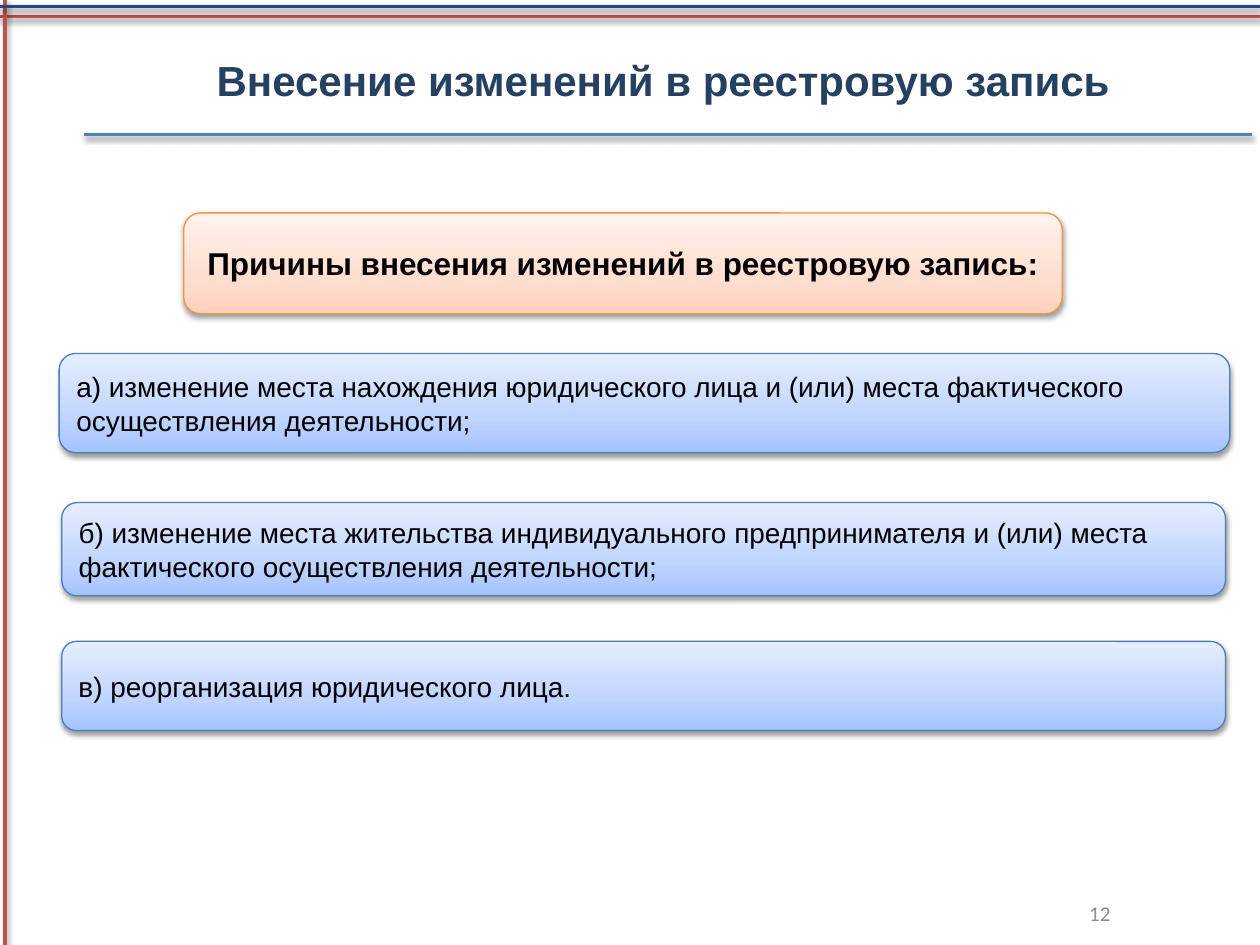
from copy import deepcopy

from lxml import etree
from pptx import Presentation
from pptx import util as u
from pptx.dml import color
from pptx.enum import shapes, text
from pptx.oxml import ns

COLORS = {
    "red": "C0504D", "navy": "1F497D", "blue": "4F81BD",
    "title": "254061", "text": "000000", "number": "8C8C8C",
    "orange edge": "F69240", "blue edge": "4B7EBC",
}
# Gradient colours run from the bottom of a panel to its top
GRADIENTS = {
    "orange": ("FFD2BD", "FFDED0", "FFF2ED"),
    "blue": ("A4C4FF", "BFD4FF", "E6EEFF"),
}
STOPS = (0, 0.35, 1)


def rgb(name):
    return color.RGBColor.from_string(COLORS[name])


class SlideBuilder:
    """Holds the style and the current slide."""

    font = "Arial"
    rule_width = 2
    edge_width = 0.75

    def __init__(self, slide):
        self.slide = slide

    def shadow(self, effects):
        outer = etree.SubElement(
            effects, ns.qn("a:outerShdw"), blurRad=str(u.Pt(3.1)),
            dist=str(u.Pt(1.6)), dir="5400000", rotWithShape="0")
        tint = etree.SubElement(outer, ns.qn("a:srgbClr"), val="000000")
        etree.SubElement(tint, ns.qn("a:alpha"), val="38000")

    def rule(self, x1, y1, x2, y2, name):
        line = self.slide.shapes.add_connector(
            shapes.MSO_CONNECTOR.STRAIGHT, *map(u.Pt, (x1, y1, x2, y2)))
        line.line.color.rgb = rgb(name)
        line.line.width = u.Pt(self.rule_width)
        properties = line.element.spPr
        self.shadow(etree.SubElement(properties, ns.qn("a:effectLst")))

    def fill_text(self, box, words, size, name, align, bold=False, font=None):
        frame = box.text_frame
        frame.word_wrap = True
        frame.vertical_anchor = text.MSO_ANCHOR.MIDDLE
        para = frame.paragraphs[0]
        para.alignment = align
        span = para.add_run()
        span.text = words
        span.font.name = font or self.font
        span.font.size = u.Pt(size)
        span.font.bold = bold
        span.font.color.rgb = rgb(name)

    def label(self, place, words, size, name, align, **style):
        box = self.slide.shapes.add_textbox(*map(u.Pt, place))
        self.fill_text(box, words, size, name, align, **style)

    def panel(self, place, words, size, theme, align, bold=False):
        box = self.slide.shapes.add_shape(
            shapes.MSO_SHAPE.ROUNDED_RECTANGLE, *map(u.Pt, place))
        box.fill.gradient()
        box.fill.gradient_angle = 90
        properties = box.element.spPr
        stop_list = properties.find(".//" + ns.qn("a:gsLst"))
        stop_list.append(deepcopy(stop_list[0]))
        for stop, position, tone in zip(
                box.fill.gradient_stops, STOPS, GRADIENTS[theme]):
            stop.position = position
            stop.color.rgb = color.RGBColor.from_string(tone)
        box.line.color.rgb = rgb(theme + " edge")
        box.line.width = u.Pt(self.edge_width)
        box.shadow.inherit = False
        self.shadow(properties.find(ns.qn("a:effectLst")))
        self.fill_text(box, words, size, "text", align, bold)


def main():
    deck = Presentation()
    deck.slide_width, deck.slide_height = u.Pt(720), u.Pt(540)
    page = SlideBuilder(deck.slides.add_slide(deck.slide_layouts[6]))
    left, center, right = (
        text.PP_ALIGN.LEFT, text.PP_ALIGN.CENTER, text.PP_ALIGN.RIGHT)

    # Frame lines and page number
    page.rule(720, 9.3, 0, 9.3, "red")
    page.rule(2.9, 0, 2.9, 540, "red")
    page.rule(0, 3.6, 720, 3.6, "navy")
    page.label((473.8, 507.6, 167.8, 28.8), "12", 12, "number", right,
               font="Calibri")

    # Title with its underline
    page.label((44.6, 11.5, 675.4, 67.7),
               "Внесение изменений в реестровую запись ", 24, "title",
               center, bold=True)
    page.rule(48.2, 77, 715.7, 77, "blue")

    # Heading and the list of reasons
    page.panel((105, 121.7, 502, 57.6),
               "Причины внесения изменений в реестровую запись:",
               18, "orange", center, bold=True)
    reasons = [
        ((33.8, 202, 669, 56.7),
         "а) изменение места нахождения юридического лица и (или) места "
         "фактического осуществления деятельности;"),
        ((35.3, 287.2, 665, 53.3),
         "б) изменение места жительства индивидуального предпринимателя "
         "и (или) места фактического осуществления деятельности;"),
        ((35.3, 366.5, 665, 51),
         "в) реорганизация юридического лица."),
    ]
    for place, words in reasons:
        page.panel(place, words, 16, "blue", left)

    deck.save("out.pptx")


if __name__ == "__main__":
    main()
